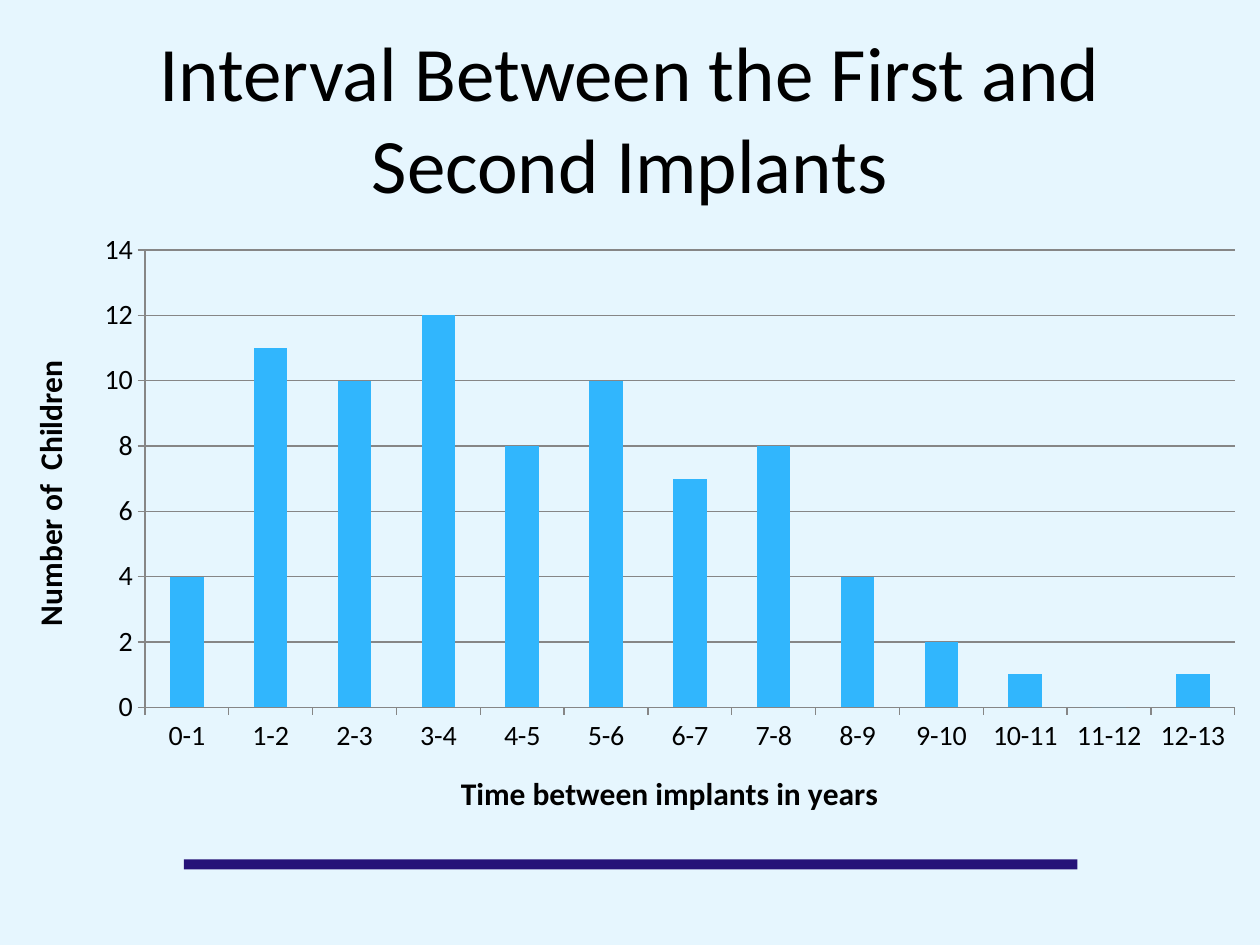
from dataclasses import dataclass
from typing import Any

from pptx import Presentation
from pptx.chart import data as chart_data
from pptx.dml import color
from pptx.enum import chart as chart_enum, shapes, text
from pptx.util import Inches, Pt

FONT = "Calibri"
BLACK, GREY, PALE, SKY, NAVY = "000000", "868686", "E6F6FE", "31B6FD", "251278"
CHILDREN = [4, 11, 10, 12, 8, 10, 7, 8, 4, 2, 1, 0, 1]


@dataclass
class AxisFormat:
    """Title and settings of one chart axis."""

    caption: str
    settings: dict[str, Any]


def rgb(value: str) -> color.RGBColor:
    """Turn a hex string into a colour."""
    return color.RGBColor.from_string(value)


def paint(fill: Any, value: str) -> None:
    """Give a fill one solid colour."""
    fill.solid()
    fill.fore_color.rgb = rgb(value)


def apply(target: Any, settings: dict[str, Any]) -> None:
    """Set each attribute named in the settings."""
    for name, value in settings.items():
        setattr(target, name, value)


def style_font(font: Any, size: int, bold: bool = False) -> None:
    """Set the face, size, weight and colour of a font."""
    apply(font, {"name": FONT, "size": Pt(size), "bold": bold})
    font.color.rgb = rgb(BLACK)


def style_line(line: Any) -> None:
    """Draw a thin grey line."""
    line.width = Pt(0.75)
    line.color.rgb = rgb(GREY)


def style_axis(axis: Any, axis_format: AxisFormat) -> None:
    """Title and format one axis."""
    apply(axis, axis_format.settings)
    style_font(axis.tick_labels.font, 16)
    style_line(axis.format.line)
    caption = axis.axis_title.text_frame
    caption.text = axis_format.caption
    style_font(caption.paragraphs[0].runs[0].font, 18, bold=True)


def add_title(slide: Any, wording: str) -> None:
    """Fill and place the title placeholder."""
    title = slide.shapes.title
    apply(title, {"left": Inches(0.5), "top": Inches(0.3),
                  "width": Inches(9), "height": Inches(1.25)})
    frame = title.text_frame
    frame.text = wording
    apply(frame, {"word_wrap": True, "vertical_anchor": text.MSO_ANCHOR.MIDDLE,
                  "auto_size": text.MSO_AUTO_SIZE.NONE})
    frame.paragraphs[0].alignment = text.PP_ALIGN.CENTER
    style_font(frame.paragraphs[0].runs[0].font, 44)


def add_footer_bar(slide: Any) -> None:
    """Add the dark bar at the foot of the slide."""
    bar = slide.shapes.add_shape(shapes.MSO_SHAPE.RECTANGLE, Inches(1.46),
                                 Inches(6.82), Inches(7.09), Inches(0.08))
    bar.shadow.inherit = False
    paint(bar.fill, NAVY)
    bar.line.fill.background()


def add_interval_chart(slide: Any) -> None:
    """Add the column chart of children by interval."""
    intervals = chart_data.CategoryChartData()
    intervals.categories = [f"{year}-{year + 1}" for year in range(len(CHILDREN))]
    intervals.add_series("Series 1", CHILDREN)
    chart = slide.shapes.add_chart(
        chart_enum.XL_CHART_TYPE.COLUMN_CLUSTERED,
        Inches(0), Inches(1.75), Inches(10), Inches(4.95), intervals).chart
    apply(chart, {"has_legend": False, "has_title": False})
    style_font(chart.font, 10)
    outside = chart_enum.XL_TICK_MARK.OUTSIDE
    style_axis(chart.category_axis, AxisFormat(
        "Time between implants in years",
        {"has_major_gridlines": False, "major_tick_mark": outside}))
    style_axis(chart.value_axis, AxisFormat(
        "Number of  Children",
        {"has_major_gridlines": True, "major_tick_mark": outside,
         "minimum_scale": 0, "maximum_scale": 14, "major_unit": 2}))
    style_line(chart.value_axis.major_gridlines.format.line)
    columns = chart.plots[0]
    apply(columns, {"gap_width": 150, "vary_by_categories": False})
    paint(columns.series[0].format.fill, SKY)


def main() -> None:
    """Build and save the slide."""
    deck = Presentation()
    apply(deck, {"slide_width": Inches(10), "slide_height": Inches(7.5)})
    slide = deck.slides.add_slide(deck.slide_layouts.get_by_name("Title Only"))
    paint(slide.background.fill, PALE)
    add_footer_bar(slide)
    add_title(slide, "Interval Between the First and Second Implants")
    add_interval_chart(slide)
    deck.save("out.pptx")


if __name__ == "__main__":
    main()
